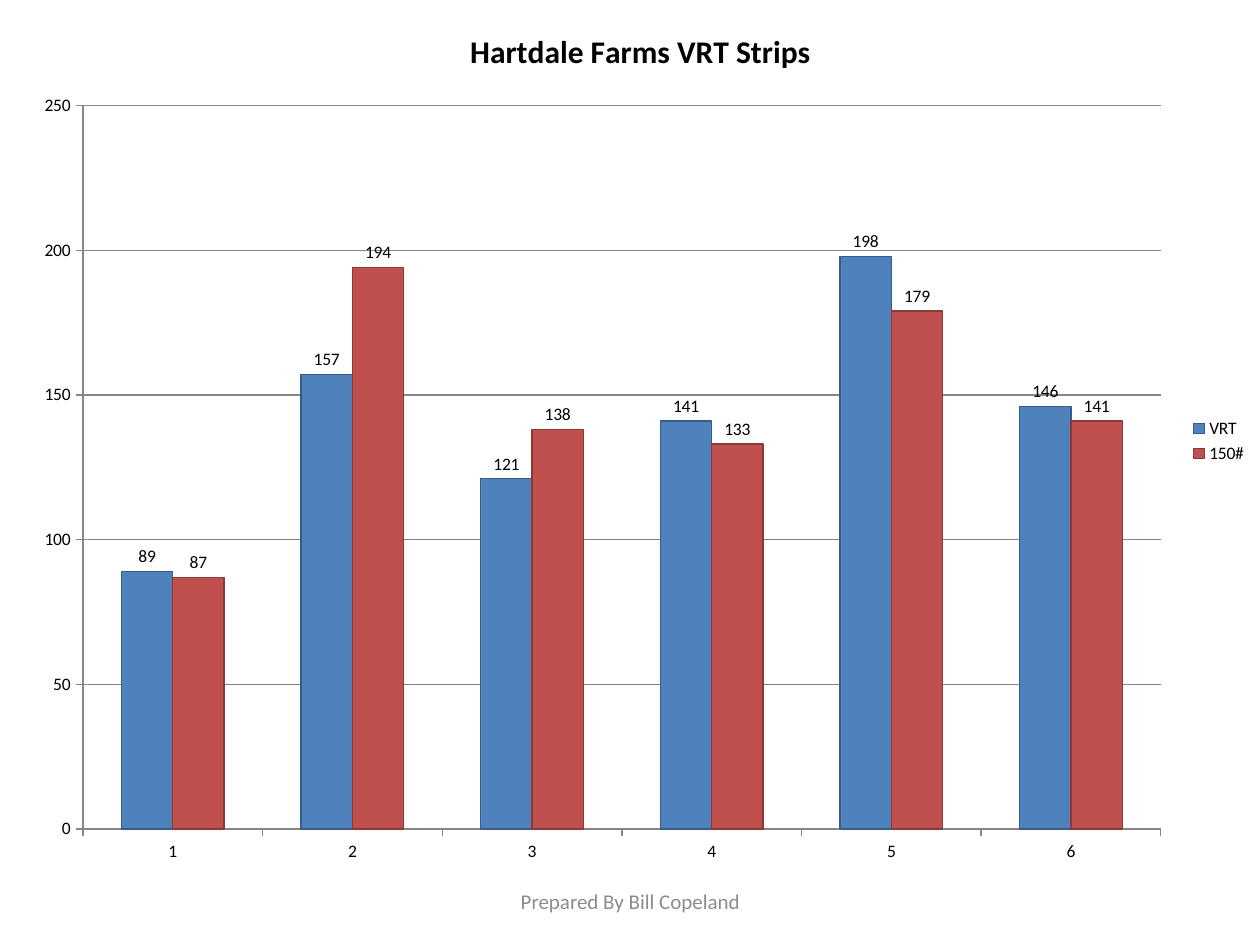
from lxml.etree import SubElement
from pptx import Presentation
from pptx.chart.data import CategoryChartData
from pptx.dml.color import RGBColor
from pptx.enum.chart import XL_CHART_TYPE, XL_LABEL_POSITION, XL_LEGEND_POSITION, XL_TICK_MARK
from pptx.enum.text import MSO_ANCHOR, PP_ALIGN
from pptx.oxml.ns import qn
from pptx.util import Emu, Pt

COLORS = {
    "text": "000000",
    "footer": "8C8C8C",
    "axis": "868686",
    "VRT": "4F81BD",
    "VRT edge": "385D8A",
    "150#": "C0504D",
    "150# edge": "8C3836",
}
YIELDS = {
    "VRT": (89, 157, 121, 141, 198, 146),
    "150#": (87, 194, 138, 133, 179, 141),
}
PLOT_LAYOUT = {"x": 0.05, "y": 0.12, "w": 0.87, "h": 0.82}


def px(length):
    return Emu(round(length * 914400 / 126))


def style_font(font, size, color, bold=False):
    font.name = "Calibri"
    font.size = Pt(size)
    font.bold = bold
    font.color.rgb = RGBColor.from_string(COLORS[color])


presentation = Presentation()
presentation.slide_width = px(1260)
presentation.slide_height = px(945)
slide = presentation.slides.add_slide(presentation.slide_layouts[6])

footer = slide.shapes.add_textbox(px(431), px(876), px(399), px(50))
text_frame = footer.text_frame
text_frame.word_wrap = True
text_frame.vertical_anchor = MSO_ANCHOR.MIDDLE
text_frame.text = "Prepared By Bill Copeland"
paragraph = text_frame.paragraphs[0]
paragraph.alignment = PP_ALIGN.CENTER
style_font(paragraph.runs[0].font, 12, "footer")

chart_data = CategoryChartData(number_format="General")
chart_data.categories = [str(strip) for strip in range(1, 7)]
for name, values in YIELDS.items():
    chart_data.add_series(name, values)

chart = slide.shapes.add_chart(
    XL_CHART_TYPE.COLUMN_CLUSTERED, px(21), px(0), px(1239), px(882), chart_data
).chart
style_font(chart.font, 10, "text")

chart.has_title = True
chart.chart_title.include_in_layout = False
title_frame = chart.chart_title.text_frame
title_frame.text = "Hartdale Farms VRT Strips"
style_font(title_frame.paragraphs[0].runs[0].font, 18, "text", bold=True)

chart.has_legend = True
chart.legend.position = XL_LEGEND_POSITION.RIGHT
chart.legend.include_in_layout = False
style_font(chart.legend.font, 10, "text")

value_axis = chart.value_axis
value_axis.minimum_scale = 0
value_axis.maximum_scale = 250
value_axis.major_unit = 50
value_axis.has_major_gridlines = True
axis_lines = [value_axis.major_gridlines.format.line]
for axis in (chart.category_axis, value_axis):
    axis.major_tick_mark = XL_TICK_MARK.OUTSIDE
    axis.minor_tick_mark = XL_TICK_MARK.NONE
    style_font(axis.tick_labels.font, 10, "text")
    axis_lines.append(axis.format.line)
for line in axis_lines:
    line.width = Pt(0.75)
    line.color.rgb = RGBColor.from_string(COLORS["axis"])

plot = chart.plots[0]
plot.gap_width = 150
plot.overlap = 0
plot.vary_by_categories = False
for series in plot.series:
    series.invert_if_negative = False
    series.format.fill.solid()
    series.format.fill.fore_color.rgb = RGBColor.from_string(COLORS[series.name])
    series.format.line.width = Pt(0.75)
    series.format.line.color.rgb = RGBColor.from_string(COLORS[f"{series.name} edge"])
    labels = series.data_labels
    labels.show_value = True
    labels.position = XL_LABEL_POSITION.OUTSIDE_END
    style_font(labels.font, 10, "text")

plot_area = chart.element.find(".//" + qn("c:plotArea"))
for layout in plot_area.findall(qn("c:layout")):
    plot_area.remove(layout)
layout = SubElement(plot_area, qn("c:layout"))
plot_area.insert(0, layout)
manual_layout = SubElement(layout, qn("c:manualLayout"))
settings = {"layoutTarget": "inner", "xMode": "edge", "yMode": "edge", **PLOT_LAYOUT}
for tag, value in settings.items():
    SubElement(manual_layout, qn(f"c:{tag}")).set("val", str(value))

presentation.save("out.pptx")
